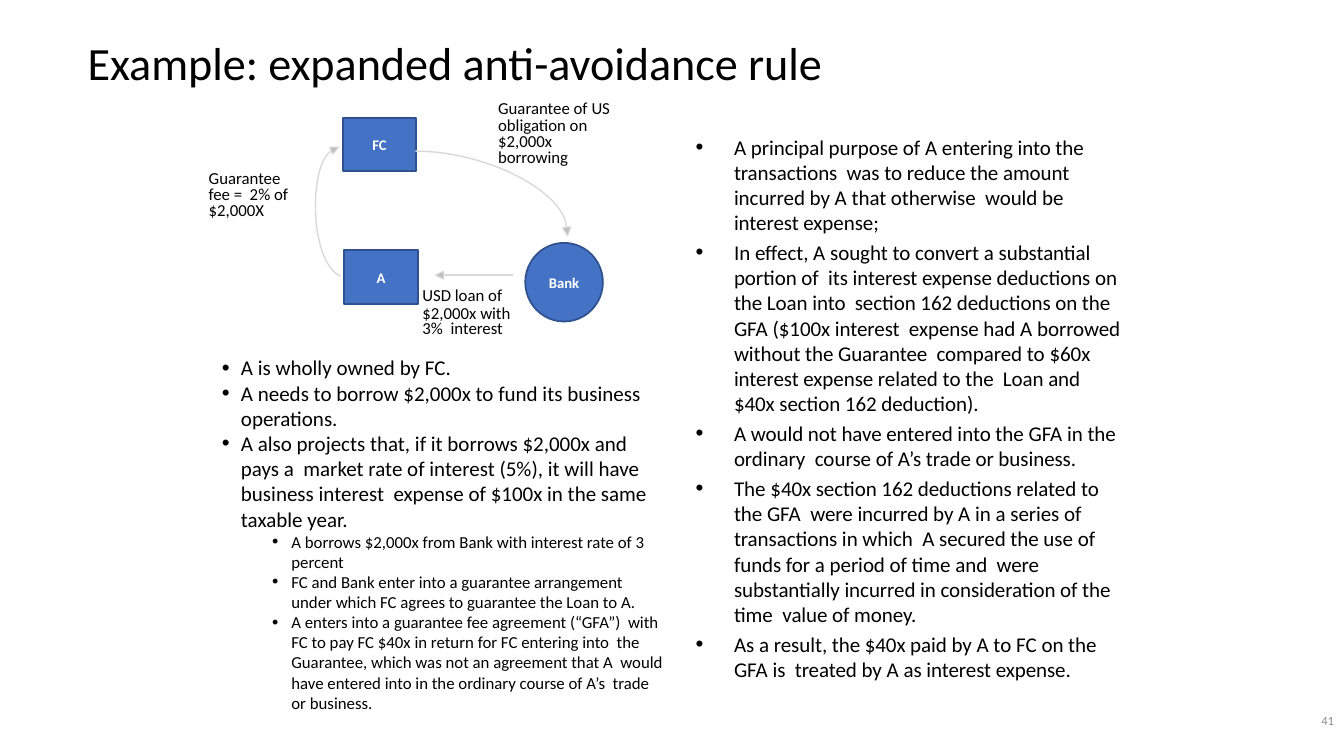
from lxml import etree
from pptx import Presentation
from pptx.dml.color import RGBColor
from pptx.enum import shapes, text
from pptx.oxml.ns import qn
from pptx.util import Inches, Pt

COLORS = {"ink": "000000", "white": "FFFFFF", "node": "4472C4", "edge": "2F528F",
          "flow": "D9D9D9", "head": "BFBFBF", "number": "8C8C8C"}
FONT = "Calibri"

# Within a paragraph, "|" switches between normal and slightly tightened letters.
FACTS = [
    "A is wholly owned by FC.",
    "A needs to borrow $2,000x to fund its business operations.",
    "A also projects that, if it borrows $2,000x and pays a  market rate of interest (5%), "
    "it will have business interest  expense of $100x in the same taxable year.",
]
STEPS = [
    "A borrows $2,000x from Bank with interest rate of 3  percent",
    "FC and Bank enter into a guarantee arrangement  under which FC agrees to guarantee "
    "the Loan to A.",
    "A enters into a guarantee fee agreement (“GFA”)  with FC to pay FC $40x in return for "
    "FC entering into  the Guarantee, which was not an agreement that A  would have entered "
    "into in the ordinary course of A’s  trade or business.",
]
ANALYSIS = [
    "A |principal purpose of |A |entering into the transactions  was |to |reduce the amount "
    "incurred by |A |that otherwise  would be interest expense;",
    "In |effect, |A |sought |to |convert |a |substantial portion of  its interest expense "
    "deductions on the Loan into  section 162 deductions on the |GFA |($100x interest  "
    "expense had |A |borrowed without the Guarantee  compared |to |$60x interest expense "
    "related |to |the  Loan and $40x section 162 deduction).",
    "A |would not have entered into the |GFA |in the ordinary  |course |of A’s trade or "
    "business.",
    "The |$40x section 162 deductions related |to |the |GFA  |were incurred by |A |in |a |"
    "series of transactions in which  |A |secured the |use |of funds for |a |period of |"
    "time |and  were substantially incurred in consideration of the |time  |value of money.",
    "As a |result, the $40x paid by |A to FC |on the |GFA |is  treated by |A |as interest "
    "expense.",
]


def rgb(name):
    return RGBColor.from_string(COLORS[name])


def add_runs(paragraph, wording, size, color="ink", bold=False):
    for i, piece in enumerate(wording.split("|")):
        if not piece:
            continue
        run = paragraph.add_run()
        run.text = piece
        run.font.name, run.font.size, run.font.bold = FONT, Pt(size), bold
        run.font.color.rgb = rgb(color)
        if i % 2:
            run._r.get_or_add_rPr().set("spc", "-5")


def add_bullet(paragraph, left, hanging):
    props = paragraph._p.get_or_add_pPr()
    props.set("marL", str(Inches(left)))
    props.set("indent", str(-Inches(hanging)))
    etree.SubElement(props, qn("a:buSzPct"), val="107000")
    etree.SubElement(props, qn("a:buFont"), typeface="Arial")
    etree.SubElement(props, qn("a:buChar"), char="•")


def text_frame(slide, left, top, width, height, anchor=text.MSO_ANCHOR.TOP, inset=0):
    box = slide.shapes.add_textbox(Inches(left), Inches(top), Inches(width), Inches(height))
    frame = box.text_frame
    frame.word_wrap = True
    frame.vertical_anchor = anchor
    frame.margin_left = frame.margin_right = Inches(inset)
    frame.margin_top = frame.margin_bottom = Inches(inset / 2)
    return frame


def next_paragraph(frame):
    first = frame.paragraphs[0]
    return frame.add_paragraph() if first.runs else first


def bullets(frame, items, size, left, hanging, gap=0, level=0):
    for item in items:
        paragraph = next_paragraph(frame)
        paragraph.level = level
        paragraph.space_before = Pt(gap if len(frame.paragraphs) > 1 else 0)
        add_bullet(paragraph, left, hanging)
        add_runs(paragraph, item, size)


def flow_label(slide, left, top, width, height, lines):
    """lines holds (wording, line spacing in points) pairs."""
    frame = text_frame(slide, left, top, width, height)
    for wording, spacing in lines:
        paragraph = next_paragraph(frame)
        paragraph.line_spacing = Pt(spacing)
        paragraph.space_before = Pt(1.1 if len(frame.paragraphs) > 1 else 0)
        add_runs(paragraph, wording, 12)


def party(slide, kind, name, left, top, width, height, weight):
    node = slide.shapes.add_shape(kind, Inches(left), Inches(top), Inches(width), Inches(height))
    node.shadow.inherit = False
    node.fill.solid()
    node.fill.fore_color.rgb = rgb("node")
    node.line.color.rgb = rgb("edge")
    node.line.width = Pt(weight)
    frame = node.text_frame
    frame.margin_left = frame.margin_right = frame.margin_top = frame.margin_bottom = 0
    frame.vertical_anchor = text.MSO_ANCHOR.MIDDLE
    frame.paragraphs[0].alignment = text.PP_ALIGN.CENTER
    add_runs(frame.paragraphs[0], name, 10.5, "white", bold=True)


def outline(slide, points, weight, closed):
    corners = [(Inches(x), Inches(y)) for x, y in points]
    builder = slide.shapes.build_freeform(*corners[0])
    builder.add_line_segments(corners[1:], close=closed)
    drawn = builder.convert_to_shape()
    drawn.shadow.inherit = False
    drawn.line.color.rgb = rgb("flow")
    drawn.line.width = Pt(weight)
    if closed:
        drawn.fill.solid()
        drawn.fill.fore_color.rgb = rgb("head")
    else:
        drawn.fill.background()


def bezier(start, pull_start, pull_end, end, steps=30):
    """Points along a cubic curve."""
    for i in range(steps + 1):
        t = i / steps
        weights = ((1 - t) ** 3, 3 * t * (1 - t) ** 2, 3 * t ** 2 * (1 - t), t ** 3)
        controls = (start, pull_start, pull_end, end)
        yield tuple(sum(w * c[axis] for w, c in zip(weights, controls)) for axis in (0, 1))


def straight_flow(slide, start, end):
    flow = slide.shapes.add_connector(shapes.MSO_CONNECTOR.STRAIGHT,
                                      *(Inches(v) for v in (*start, *end)))
    flow.line.color.rgb = rgb("flow")
    flow.line.width = Pt(1.25)
    etree.SubElement(flow._element.spPr, qn("a:effectLst"))


def diagram(slide):
    rectangle, oval = shapes.MSO_SHAPE.RECTANGLE, shapes.MSO_SHAPE.OVAL
    party(slide, rectangle, "A", 3.41, 2.48, 0.74, 0.54, 1.5)
    party(slide, oval, "Bank", 5.21, 2.41, 0.77, 0.78, 1.25)
    party(slide, rectangle, "FC", 3.4, 1.17, 0.73, 0.53, 1.5)

    straight_flow(slide, (5.09, 2.73), (4.39, 2.73))
    fee = bezier((3.38, 2.74), (3.06, 2.6), (3.06, 1.6), (3.3, 1.49))
    guarantee = bezier((4.12, 1.5), (4.85, 1.5), (5.62, 1.92), (5.62, 2.27))
    for curve in (fee, guarantee):
        outline(slide, list(curve), 1, closed=False)
    for arrowhead in ([(4.4, 2.69), (4.32, 2.73), (4.4, 2.77)],
                      [(3.27, 1.46), (3.3, 1.53), (3.36, 1.46)],
                      [(5.66, 2.25), (5.58, 2.26), (5.63, 2.34)]):
        outline(slide, arrowhead, 0.75, closed=True)

    flow_label(slide, 4.19, 2.86, 0.95, 0.5,
               [("|USD |loan of", 12.2), ("$2,000x |with |3%  interest", 11.2)])
    flow_label(slide, 2.07, 1.71, 0.93, 0.47, [("Guarantee fee =  2% of $2,000X", 11.3)])
    flow_label(slide, 4.94, 1.03, 1.22, 0.62,
               [("Guarantee of |US", 10.2), ("obligation on $2,000x  |borrowing", 11.2)])


def main():
    deck = Presentation()
    deck.slide_width, deck.slide_height = Inches(13.33), Inches(7.5)
    slide = deck.slides.add_slide(deck.slide_layouts[6])

    middle = text.MSO_ANCHOR.MIDDLE
    title = text_frame(slide, 0.87, -0.11, 11.5, 1.45, middle)
    add_runs(title.paragraphs[0], "|Example: expanded anti-avoidance rule", 33)
    number = text_frame(slide, 10.33, 6.95, 3, 0.4, middle, inset=0.1)
    number.paragraphs[0].alignment = text.PP_ALIGN.RIGHT
    add_runs(number.paragraphs[0], "41", 9, "number")

    diagram(slide)
    facts = text_frame(slide, 2.19, 3.52, 4.43, 3.58)
    bullets(facts, FACTS, 15, 0.2, 0.19)
    bullets(facts, STEPS, 12, 0.7, 0.19, level=1)
    analysis = text_frame(slide, 6.89, 1.33, 4.27, 5.72)
    bullets(analysis, ANALYSIS, 15, 0.39, 0.38, gap=3.3)

    deck.save("out.pptx")


if __name__ == "__main__":
    main()
